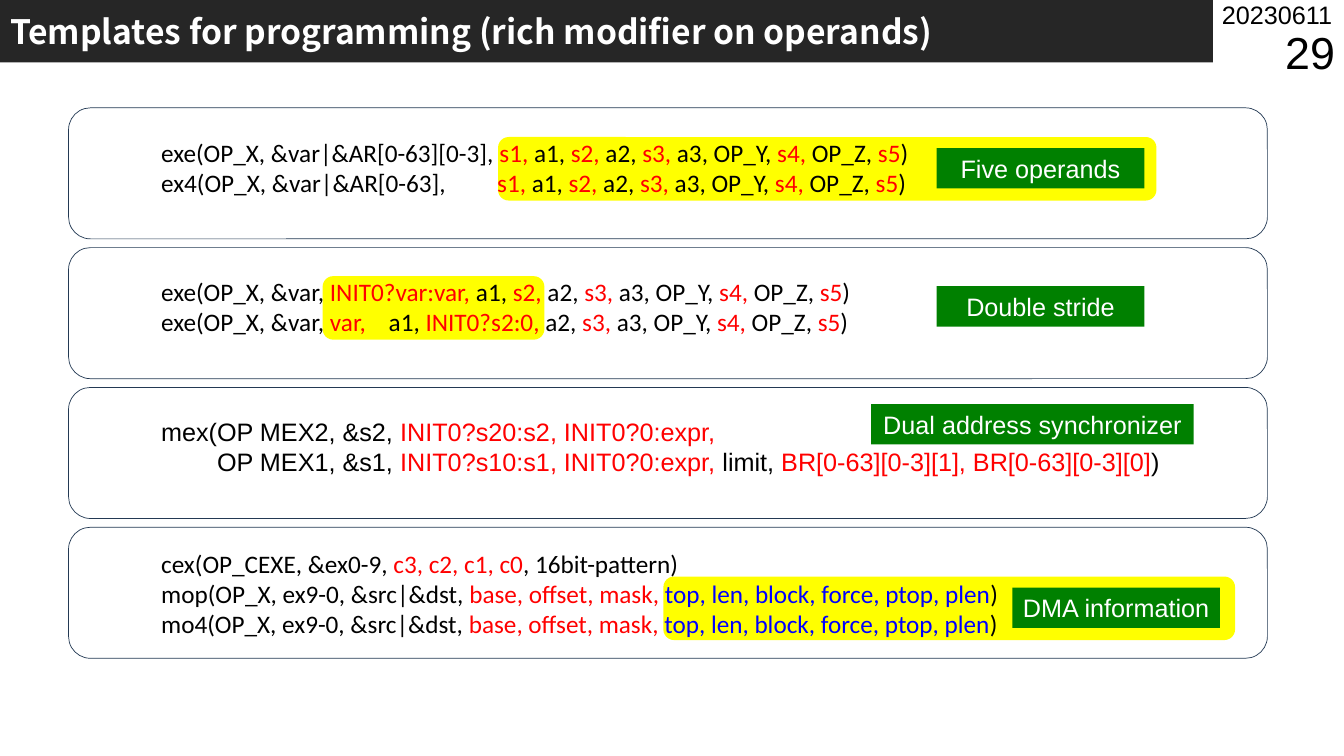
from lxml import etree
from pptx import Presentation
from pptx.dml.color import RGBColor
from pptx.enum import shapes, text
from pptx.oxml import ns
from pptx.util import Inches, Pt

BLACK, RED, BLUE, WHITE = "000000", "FF0000", "0000FF", "FFFFFF"
YELLOW, GREEN, CHARCOAL, NAVY = "FFFF00", "008000", "262626", "233953"

LATER_OPERANDS = [
    ("a2, ", BLACK), ("s3, ", RED), ("a3, OP_Y, ", BLACK), ("s4,", RED),
    (" OP_Z, ", BLACK), ("s5", RED), (")", BLACK),
]
ALL_OPERANDS = [("s1, ", RED), ("a1, ", BLACK), ("s2, ", RED)] + LATER_OPERANDS
DMA_OPERANDS = [
    ("base, offset, mask, ", RED),
    ("top, len, block, force, ptop, plen", BLUE), (")", BLACK),
]
FIVE_OPERANDS = [
    [("exe(OP_X, &var|&AR[0-63][0-3], ", BLACK)] + ALL_OPERANDS,
    [("ex4(OP_X, &var|&AR[0-63],         ", BLACK)] + ALL_OPERANDS,
]
DOUBLE_STRIDE = [
    [("exe(OP_X, &var, ", BLACK), ("INIT0?var:var, ", RED),
     ("a1, ", BLACK), ("s2, ", RED)] + LATER_OPERANDS,
    [("exe(OP_X, &var, ", BLACK), ("var,    ", RED),
     ("a1, ", BLACK), ("INIT0?s2:0, ", RED)] + LATER_OPERANDS,
]
DUAL_ADDRESS = [
    [("mex(OP MEX2, &s2, ", BLACK), ("INIT0?s20:s2, INIT0?0:expr,", RED)],
    [("        OP MEX1, &s1, ", BLACK), ("INIT0?s10:s1, INIT0?0:expr, ", RED),
     ("limit, ", BLACK), ("BR[0-63][0-3][1], BR[0-63][0-3][0]", RED), (")", BLACK)],
]
DMA_INFORMATION = [
    [("cex(OP_CEXE, &ex0-9, ", BLACK), ("c3, c2, c1, c0", RED),
     (", 16bit-pattern)", BLACK)],
    [("mop(OP_X, ex9-0, &src|&dst, ", BLACK)] + DMA_OPERANDS,
    [("mo4(OP_X, ex9-0, &src|&dst, ", BLACK)] + DMA_OPERANDS,
]


def color(value):
    return RGBColor.from_string(value)


def write(box, lines, size=18, font="Arial", bold=False,
          align=text.PP_ALIGN.LEFT, anchor=text.MSO_ANCHOR.TOP, wrap=True):
    frame = box.text_frame
    frame.word_wrap = wrap
    frame.auto_size = text.MSO_AUTO_SIZE.NONE
    frame.vertical_anchor = anchor
    for index, line in enumerate(lines):
        para = frame.add_paragraph() if index else frame.paragraphs[0]
        para.alignment = align
        for words, shade in line:
            span = para.add_run()
            span.text = words
            span.font.size = Pt(size)
            span.font.name = font
            span.font.bold = bold
            span.font.color.rgb = color(shade)


def add_text(page, lines, left, top, width, height, **style):
    box = page.shapes.add_textbox(
        Inches(left), Inches(top), Inches(width), Inches(height))
    write(box, lines, **style)


def add_block(page, kind, left, top, width, height, fill=None, line=None):
    block = page.shapes.add_shape(
        kind, Inches(left), Inches(top), Inches(width), Inches(height))
    block.shadow.inherit = False
    if fill:
        block.fill.solid()
        block.fill.fore_color.rgb = color(fill)
    else:
        block.fill.background()
    if line:
        block.line.color.rgb = color(line)
        block.line.width = Pt(0.5)
    else:
        block.line.fill.background()
    return block


def add_label(page, words, left, top, width=2.06):
    label = add_block(page, shapes.MSO_SHAPE.RECTANGLE, left, top, width, 0.4, fill=GREEN)
    write(label, [[(words, WHITE)]], align=text.PP_ALIGN.CENTER)


def set_title(page, words):
    title = page.shapes.title
    title.left, title.top = Inches(0), Inches(0)
    title.width, title.height = Inches(12.03), Inches(0.62)
    outline = etree.SubElement(
        title.element.spPr, ns.qn("a:prstGeom"), prst="snip2DiagRect")
    etree.SubElement(outline, ns.qn("a:avLst"))
    title.fill.solid()
    title.fill.fore_color.rgb = color(CHARCOAL)
    write(title, [[(words, WHITE)]], size=24, font="Noto Sans CJK JP",
          bold=True, anchor=text.MSO_ANCHOR.MIDDLE)


def main():
    deck = Presentation()
    deck.slide_width, deck.slide_height = Inches(13.33), Inches(7.5)
    page = deck.slides.add_slide(deck.slide_layouts[5])
    rounded = shapes.MSO_SHAPE.ROUNDED_RECTANGLE

    set_title(page, "Templates for programming (rich modifier on operands)")
    add_text(page, [[("20230611", BLACK)]], 12.02, -0.01, 1.31, 0.3,
             anchor=text.MSO_ANCHOR.MIDDLE, wrap=False)
    add_text(page, [[("29", BLACK)]], 12.26, 0.29, 1.08, 0.44, size=32,
             align=text.PP_ALIGN.RIGHT, anchor=text.MSO_ANCHOR.MIDDLE)

    for left, top, width in [(4.94, 1.36, 6.53), (3.2, 2.74, 2.2), (6.58, 5.72, 5.67)]:
        add_block(page, rounded, left, top, width, 0.63, fill=YELLOW)

    add_text(page, FIVE_OPERANDS, 1.5, 1.31, 9.24, 0.71, font="Calibri")
    add_text(page, DOUBLE_STRIDE, 1.5, 2.69, 9.24, 0.71, font="Calibri")
    add_text(page, DUAL_ADDRESS, 1.5, 4.08, 10.44, 0.71)
    add_text(page, DMA_INFORMATION, 1.5, 5.39, 9.85, 1.01, font="Calibri",
             align=text.PP_ALIGN.JUSTIFY)

    add_label(page, "Five operands", 9.29, 1.47)
    add_label(page, "Double stride", 9.29, 2.84)
    add_label(page, "Dual address synchronizer", 8.64, 4.01, width=3.2)
    add_label(page, "DMA information", 10.04, 5.83)

    for row in range(4):
        add_block(page, rounded, 0.68, 1.07 + 1.387 * row, 11.89, 1.3, line=NAVY)

    deck.save("out.pptx")


if __name__ == "__main__":
    main()
